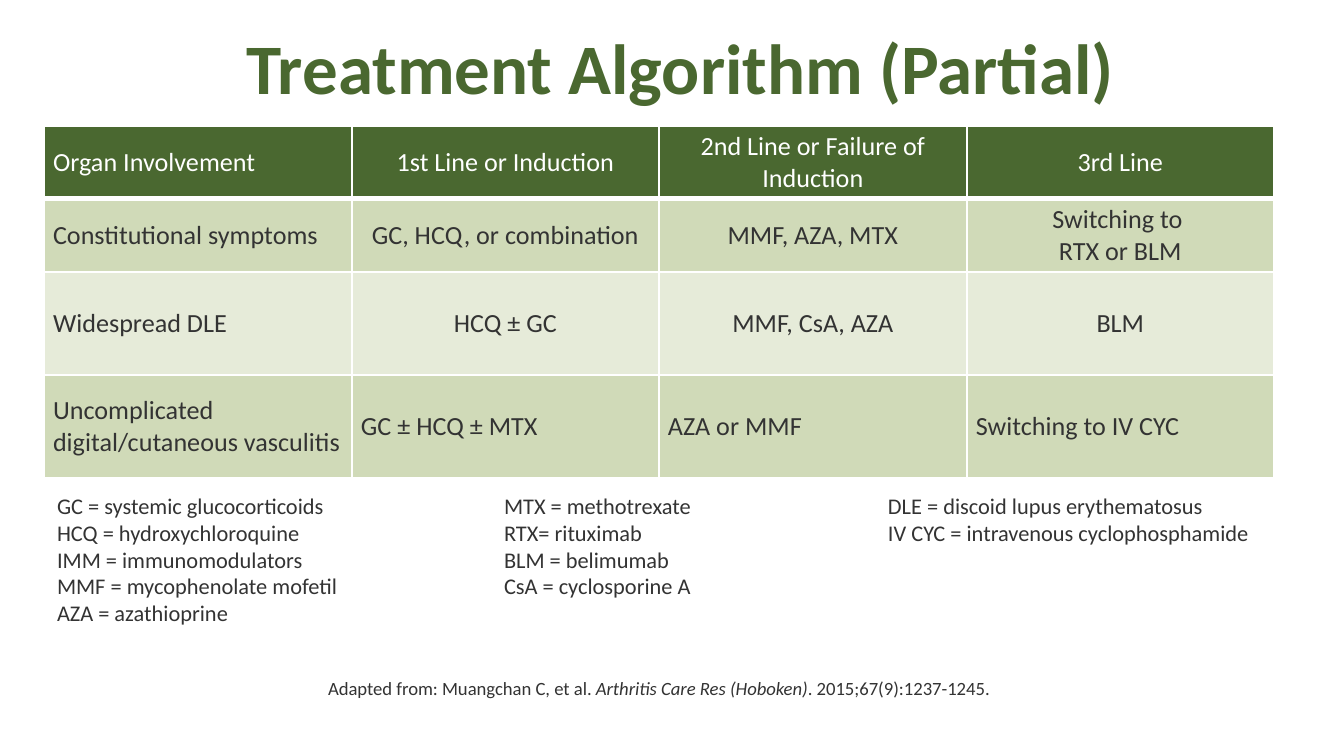
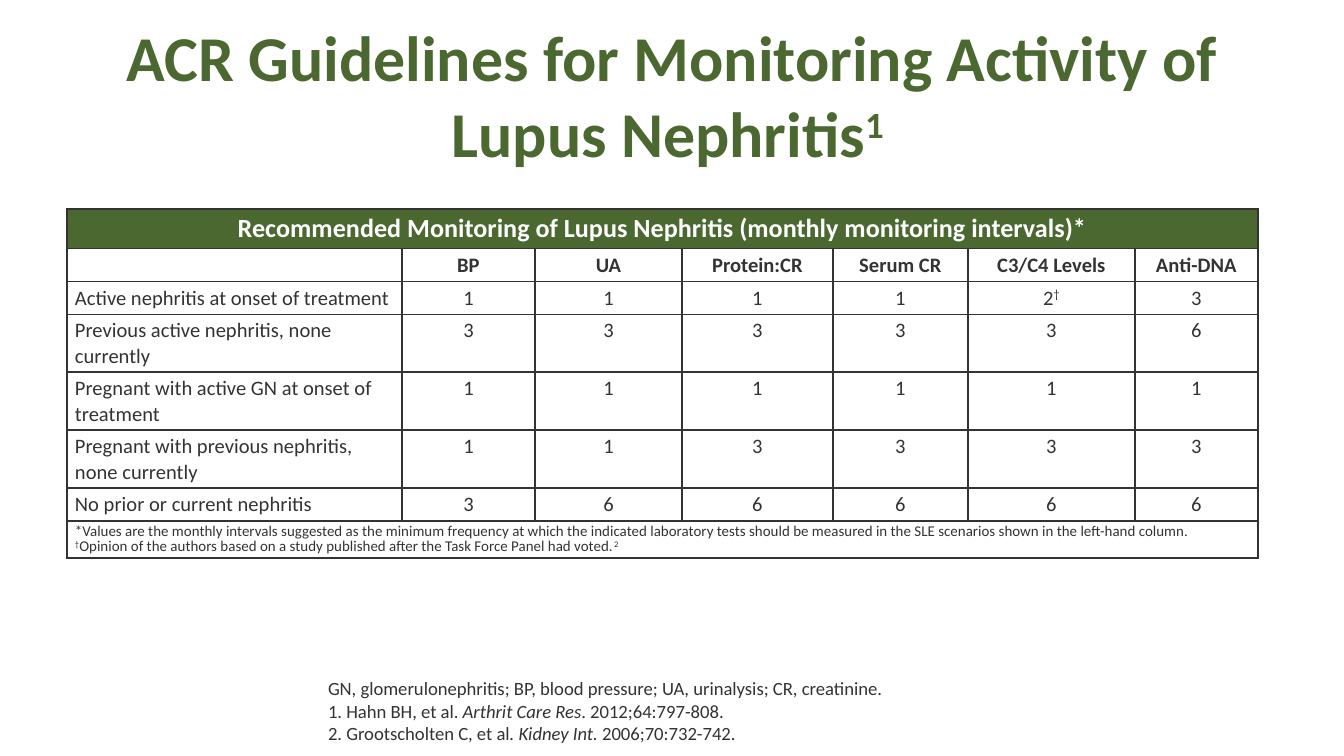
"""Build two lupus slides: a treatment algorithm and a monitoring guideline."""
from dataclasses import dataclass

from lxml.etree import SubElement
from pptx import Presentation
from pptx.dml.color import RGBColor as RGB
from pptx.enum.text import MSO_ANCHOR as ANCHOR, PP_ALIGN as ALIGN
from pptx.oxml.ns import qn
from pptx.util import Emu, Pt


@dataclass(frozen=True)
class Theme:
    font: str = "Calibri"
    green: str = "4A6830"
    ink: str = "333333"
    white: str = "FFFFFF"
    band: str = "D0DAB8"
    pale: str = "E6EBD9"
    title: float = 38
    title_small: float = 34.2
    head: float = 14
    legend: float = 12
    cell: float = 11
    source: float = 10
    note: float = 8


PX = 914400 / 134.4
MARGINS = ("margin_left", "margin_top", "margin_right", "margin_bottom")
SUP = {"sup": True}
ITALIC = {"italic": True}


def px(n):
    return Emu(round(n * PX))


class Deck:
    def __init__(self, theme):
        self.t = theme
        self.prs = Presentation()
        self.prs.slide_width, self.prs.slide_height = px(1344), px(756)
        self.s = None

    def slide(self):
        self.s = self.prs.slides.add_slide(self.prs.slide_layouts[6])

    def fill_text(self, tf, paras, size, color, align=ALIGN.LEFT, spacing=None, bold=False):
        for i, runs in enumerate(paras):
            p = tf.add_paragraph() if i else tf.paragraphs[0]
            p.alignment = align
            if spacing:
                p.line_spacing = spacing
            for run in [runs] if isinstance(runs, str) else runs:
                text, extra = (run, {}) if isinstance(run, str) else run
                r = p.add_run()
                r.text = text
                r.font.color.rgb = RGB.from_string(color)
                fmt = {"name": self.t.font, "size": Pt(size), "bold": bold, **extra}
                if fmt.pop("sup", False):
                    r._r.get_or_add_rPr().set("baseline", "30000")
                for key, value in fmt.items():
                    setattr(r.font, key, value)

    def text(self, box, paras, size, color=None, insets=(13, 7, 13, 7),
             anchor=ANCHOR.TOP, **style):
        tf = self.s.shapes.add_textbox(*map(px, box)).text_frame
        tf.word_wrap = True
        tf.vertical_anchor = anchor
        for name, inset in zip(MARGINS, insets):
            setattr(tf, name, px(inset))
        self.fill_text(tf, paras, size, color or self.t.ink, **style)

    def title(self, box, runs, size):
        self.text(box, [runs], size, self.t.green, anchor=ANCHOR.MIDDLE,
                  align=ALIGN.CENTER, bold=True)

    def source(self, paras):
        self.text((321, 676, 1023, 74), paras, self.t.source, insets=(7, 1, 34, 7))

    def table(self, left, top, cols, rows):
        frame = self.s.shapes.add_table(len(rows), len(cols), px(left), px(top),
                                        px(sum(cols)), px(sum(rows)))
        tbl = frame.table
        tbl.first_row = tbl.horz_banding = False
        for col, width in zip(tbl.columns, cols):
            col.width = px(width)
        for row, height in zip(tbl.rows, rows):
            row.height = px(height)
        return tbl

    def cell(self, cell, paras, size, color, fill, line, insets,
             anchor=ANCHOR.TOP, bottom=1, **style):
        cell.vertical_anchor = anchor
        for name, inset in zip(MARGINS, insets):
            setattr(cell, name, px(inset))
        tcPr = cell._tc.get_or_add_tcPr()
        for side, width in zip("LRTB", (1, 1, 1, bottom)):
            ln = SubElement(tcPr, qn(f"a:ln{side}"), w=str(Pt(width)))
            solid = SubElement(ln, qn("a:solidFill"))
            SubElement(solid, qn("a:srgbClr"), val=line)
        if fill:
            cell.fill.solid()
            cell.fill.fore_color.rgb = RGB.from_string(fill)
        else:
            cell.fill.background()
        if paras:
            self.fill_text(cell.text_frame, paras, size, color, **style)
        else:
            SubElement(cell.text_frame.paragraphs[0]._p, qn("a:endParaRPr"),
                       sz=str(Pt(size).centipoints))


def treatment_slide(d):
    t = d.t
    d.slide()
    d.title((44, 3, 1273, 126), "Treatment Algorithm (Partial)", t.title)

    legend = [
        (44, ["GC = systemic glucocorticoids", "HCQ = hydroxychloroquine",
              "IMM = immunomodulators", "MMF = mycophenolate mofetil",
              "AZA = azathioprine"]),
        (491, ["MTX = methotrexate", "RTX= rituximab", "BLM = belimumab",
               "CsA = cyclosporine A"]),
        (875, ["DLE = discoid lupus erythematosus",
               "IV CYC = intravenous cyclophosphamide"]),
    ]
    for left, terms in legend:
        d.text((left, 485, 442, 176), terms, t.legend)

    rows = [
        ["Organ Involvement", "1st Line or Induction",
         "2nd Line or Failure of Induction", "3rd Line"],
        ["Constitutional symptoms", "GC, HCQ, or combination", "MMF, AZA, MTX",
         "Switching to \nRTX or BLM"],
        ["Widespread DLE", "HCQ ± GC", "MMF, CsA, AZA", "BLM"],
        ["Uncomplicated digital/cutaneous vasculitis", "GC ± HCQ ± MTX",
         "AZA or MMF", "Switching to IV CYC"],
    ]
    fills = [t.green, t.band, t.pale, t.band]
    tbl = d.table(44, 126, [308, 307] * 2, [73, 73, 103, 103])
    for i, row in enumerate(rows):
        for j, text in enumerate(row):
            centred = j > 0 and i < 3
            d.cell(tbl.cell(i, j), text.split("\n"), t.head,
                   t.ink if i else t.white, fills[i], t.white, (9, 5, 9, 5),
                   anchor=ANCHOR.MIDDLE, bottom=1 if i else 3,
                   align=ALIGN.CENTER if centred else ALIGN.LEFT)

    d.source([["Adapted from: Muangchan C, et al. ",
               ("Arthritis Care Res (Hoboken)", ITALIC), ". 2015;67(9):1237-1245."]])


def monitoring_slide(d):
    t = d.t
    d.slide()
    d.title((67, 31, 1210, 126),
            ["ACR Guidelines for Monitoring Activity of Lupus Nephritis", ("1 ", SUP)],
            t.title_small)

    banner = ["Recommended Monitoring of Lupus Nephritis (monthly monitoring intervals)*"]
    notes = [
        "*Values are the monthly intervals suggested as the minimum frequency at which "
        "the indicated laboratory tests should be measured in the SLE scenarios shown "
        "in the left-hand column.",
        [("†", SUP), "Opinion of the authors based on a study published after the "
         "Task Force Panel had voted.", ("2", SUP)],
    ]
    grid = [
        ["", "BP", "UA", "Protein:CR", "Serum CR", "C3/C4 Levels", "Anti-DNA"],
        ["Active nephritis at onset of treatment", *"1111", ["2", ("†", SUP)], "3"],
        ["Previous active nephritis, none currently", *"333336"],
        ["Pregnant with active GN at onset of treatment", *"111111"],
        ["Pregnant with previous nephritis, none currently", *"113333"],
        ["No prior or current nephritis", *"366666"],
    ]
    cols = [335, 133, 147, 151, 135, 167, 123]
    tbl = d.table(67, 209, cols, [38, 33, 33, 58, 58, 58, 33, 37])
    box = {"line": t.ink, "insets": (8, 4, 8, 4)}
    last = len(grid) + 1
    for i in (0, last):
        tbl.cell(i, 0).merge(tbl.cell(i, len(cols) - 1))
    for j in range(len(cols)):
        d.cell(tbl.cell(0, j), [] if j else banner, t.head, t.white, t.green,
               align=ALIGN.CENTER, bold=True, **box)
        d.cell(tbl.cell(last, j), [] if j else notes, t.note, t.ink, None,
               spacing=0.8, **box)
    for i, row in enumerate(grid, 1):
        for j, text in enumerate(row):
            d.cell(tbl.cell(i, j), [text] if text else [], t.cell, t.ink, None,
                   align=ALIGN.CENTER if j else ALIGN.LEFT, bold=i == 1, **box)

    d.source([
        "GN, glomerulonephritis; BP, blood pressure; UA, urinalysis; CR, creatinine.",
        ["1. Hahn BH, et al. ", ("Arthrit Care Res", ITALIC), ". 2012;64:797-808."],
        ["2. Grootscholten C, et al", (". Kidney Int.", ITALIC), " 2006;70:732-742."],
    ])


def main():
    d = Deck(Theme())
    treatment_slide(d)
    monitoring_slide(d)
    d.prs.save("out.pptx")


if __name__ == "__main__":
    main()
